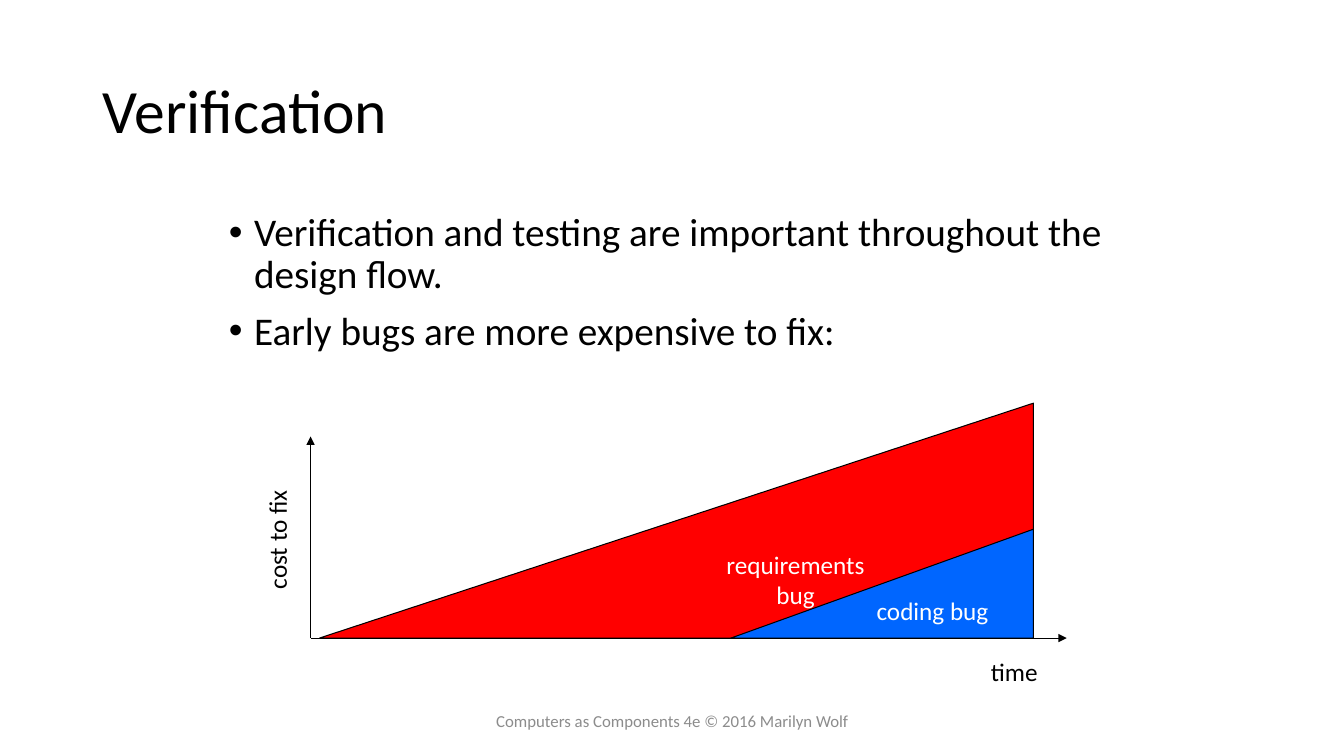
from pptx import Presentation
from pptx.dml.color import RGBColor
from pptx.enum import shapes, text
from pptx.oxml import ns, xmlchemy as xc
from pptx.util import Inches, Pt

FONT = "Calibri"
BLACK, WHITE, GREY = "000000", "FFFFFF", "8C8C8C"
RED, BLUE = "FF0000", "0066FF"
LEFT, MID = text.PP_ALIGN.LEFT, text.PP_ALIGN.CENTER


def color(hex):
    return RGBColor.from_string(hex)


def box(*nums):
    return [Inches(n) for n in nums]


def place(shape, *nums):
    shape.left, shape.top, shape.width, shape.height = box(*nums)


def write(frame, lines, size, tint=BLACK, align=LEFT):
    """Fill a text frame, one paragraph per line."""
    for i, line in enumerate(lines):
        para = frame.add_paragraph() if i else frame.paragraphs[0]
        para.alignment = align
        run = para.add_run()
        run.text = line
        run.font.name, run.font.size = FONT, Pt(size)
        run.font.color.rgb = color(tint)


def bullet(para):
    props = para._p.get_or_add_pPr()
    props.set("marL", str(Inches(0.25)))
    props.set("indent", str(Inches(-0.25)))
    para.line_spacing, para.space_before = 0.9, Pt(10)
    for tag, key, val in (("a:buFont", "typeface", "Arial"),
                          ("a:buChar", "char", "•")):
        mark = xc.OxmlElement(tag)
        mark.set(key, val)
        props.append(mark)


def label(slide, line, at, size=18, tint=BLACK, align=LEFT, wrap=False):
    shape = slide.shapes.add_textbox(*box(*at))
    shape.text_frame.word_wrap = wrap
    write(shape.text_frame, [line], size, tint, align)
    return shape


def wedge(slide, lines, at, fill):
    """Right triangle that rises to the right."""
    shape = slide.shapes.add_shape(
        shapes.MSO_SHAPE.RIGHT_TRIANGLE, *box(*at))
    shape._element.spPr.find(ns.qn("a:xfrm")).set("flipH", "1")
    shape.shadow.inherit = False
    shape.fill.solid()
    shape.fill.fore_color.rgb = color(fill)
    shape.line.color.rgb = color(BLACK)
    shape.line.width = Pt(0.75)
    frame = shape.text_frame
    frame.word_wrap = False
    frame.vertical_anchor = text.MSO_ANCHOR.MIDDLE
    write(frame, lines, 18, WHITE, MID)


def axis(slide, *ends):
    link = slide.shapes.add_connector(
        shapes.MSO_CONNECTOR.STRAIGHT, *box(*ends))
    link.line.color.rgb = color(BLACK)
    link.line.width = Pt(0.75)
    tip = xc.OxmlElement("a:tailEnd")
    tip.set("type", "triangle")
    link.line._get_or_add_ln().append(tip)
    link._element.spPr.append(xc.OxmlElement("a:effectLst"))


def main():
    deck = Presentation()
    deck.slide_width, deck.slide_height = box(13.33, 7.5)
    slide = deck.slides.add_slide(deck.slide_layouts[1])

    # Title and bullets
    title, body = slide.placeholders
    place(title, 0.92, 0.4, 11.5, 1.45)
    place(body, 2.17, 2.06, 8.94, 1.94)
    for shape in (title, body):
        shape.text_frame.auto_size = text.MSO_AUTO_SIZE.NONE
    title.text_frame.vertical_anchor = text.MSO_ANCHOR.MIDDLE
    write(title.text_frame, ["Verification"], 44)
    title.text_frame.paragraphs[0].line_spacing = 0.9
    write(body.text_frame, [
        "Verification and testing are important throughout the design flow.",
        "Early bugs are more expensive to fix:"], 28)
    for para in body.text_frame.paragraphs:
        bullet(para)

    # Cost wedges, ending at the same time on the same base
    base, end = 6.33, 10.25
    for lines, wide, high, fill in (
            (["requirements", "bug"], 7.08, 2.33, RED),
            (["coding bug"], 3, 1.08, BLUE)):
        wedge(slide, lines, (end - wide, base - high, wide, high), fill)

    # Axes with their names
    zero = 3.08
    axis(slide, zero, base, zero, base - 2)
    axis(slide, zero, base, zero + 7.5, base)
    label(slide, "time", (9.73, 6.46, 0.67, 0.4))
    cost = label(slide, "cost to fix", (2.15, 5.15, 1.19, 0.4))
    cost.rotation = 270

    # Footer
    foot = label(slide, "Computers as Components 4e © 2016 Marilyn Wolf",
                 (4.42, 6.95, 4.5, 0.4), 12, GREY, MID, True)
    foot.text_frame.vertical_anchor = text.MSO_ANCHOR.MIDDLE

    deck.save("out.pptx")


if __name__ == "__main__":
    main()
